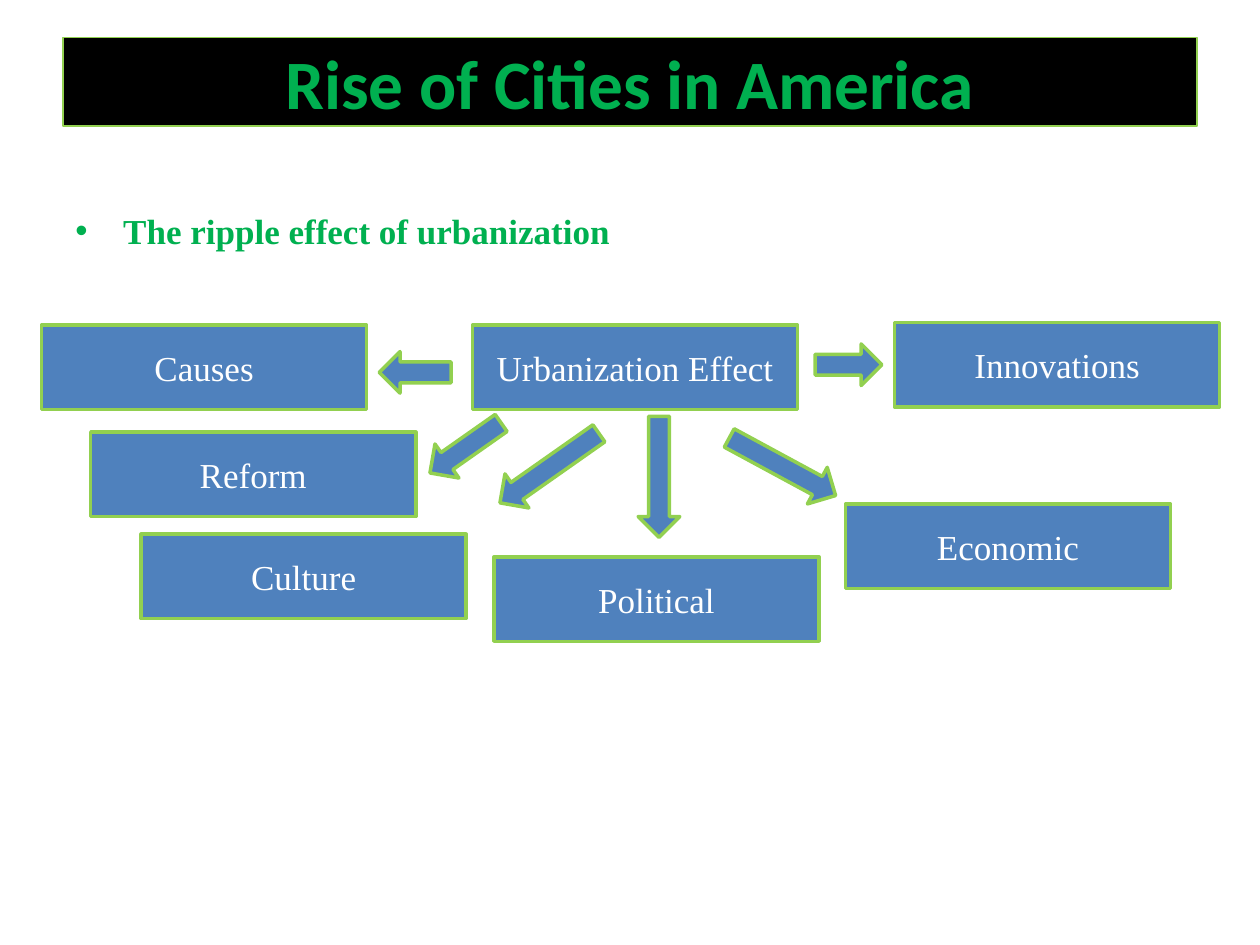
from lxml.etree import SubElement
from pptx import Presentation
from pptx.dml.color import RGBColor
from pptx.enum.shapes import MSO_SHAPE as SHAPE
from pptx.enum.text import MSO_ANCHOR as ANCHOR, PP_ALIGN as ALIGN
from pptx.oxml.ns import qn
from pptx.util import Inches, Pt

BLACK, WHITE = "000000", "FFFFFF"
GREEN, LIME, BLUE = "00B050", "92D050", "4F81BD"
SERIF = "Times New Roman"
BOX_W, BOX_H, ARROW_H = 2.58, 0.67, 0.33

# label, left, top
BOXES = [
    ("Urbanization Effect", 3.75, 2.58),
    ("Causes", 0.33, 2.58),
    ("Innovations", 7.1, 2.56),
    ("Reform", 0.72, 3.43),
    ("Culture", 1.12, 4.24),
    ("Political", 3.92, 4.42),
    ("Economic", 6.71, 4),
]

# left, top, length, rotation
ARROWS = [
    (3.01, 2.79, 0.57, 180),
    (6.47, 2.73, 0.53, 0),
    (3.35, 3.39, 0.69, 144.9),
    (3.88, 3.55, 0.96, 144.9),
    (4.75, 3.62, 0.96, 90),
    (5.73, 3.54, 0.96, 28.4),
]


def rgb(color):
    return RGBColor.from_string(color)


def paint(sp, fill, line=None, width=2):
    sp.fill.solid()
    sp.fill.fore_color.rgb = rgb(fill)
    if line:
        sp.line.color.rgb = rgb(line)
        sp.line.width = Pt(width)


def add_run(p, text, size, font, color, bold=False):
    r = p.add_run()
    r.text = text
    r.font.size = Pt(size)
    r.font.name = font
    r.font.bold = bold
    r.font.color.rgb = rgb(color)


def set_title(slide, text):
    sp = slide.shapes.title
    sp.left, sp.top = Inches(0.5), Inches(0.3)
    sp.width, sp.height = Inches(9), Inches(0.7)
    paint(sp, BLACK, LIME, 0.75)
    tf = sp.text_frame
    tf.vertical_anchor = ANCHOR.MIDDLE
    p = tf.paragraphs[0]
    p.alignment = ALIGN.CENTER
    add_run(p, text, 39.6, "Calibri", GREEN, bold=True)


def add_bullet_text(slide, text):
    sp = slide.shapes.add_textbox(Inches(0.5), Inches(1.61), Inches(9), Inches(4.95))
    paint(sp, WHITE)
    tf = sp.text_frame
    tf.word_wrap = True
    p = tf.paragraphs[0]
    pPr = p._p.get_or_add_pPr()
    pPr.set("marL", str(Inches(0.38)))
    pPr.set("indent", str(-Inches(0.38)))
    SubElement(pPr, qn("a:buFont"), typeface="Arial")
    SubElement(pPr, qn("a:buChar"), char="•")
    add_run(p, text, 20, SERIF, GREEN, bold=True)


def add_preset(slide, kind, left, top, width, height):
    sp = slide.shapes.add_shape(
        kind, Inches(left), Inches(top), Inches(width), Inches(height))
    sp.shadow.inherit = False
    paint(sp, BLUE, LIME)
    return sp


def add_box(slide, label, left, top):
    sp = add_preset(slide, SHAPE.RECTANGLE, left, top, BOX_W, BOX_H)
    tf = sp.text_frame
    tf.word_wrap = True
    tf.vertical_anchor = ANCHOR.MIDDLE
    p = tf.paragraphs[0]
    p.alignment = ALIGN.CENTER
    add_run(p, label, 20, SERIF, WHITE)


def add_arrow(slide, left, top, length, rotation):
    sp = add_preset(slide, SHAPE.RIGHT_ARROW, left, top, length, ARROW_H)
    sp.rotation = rotation


def main():
    prs = Presentation()
    prs.slide_width, prs.slide_height = Inches(10), Inches(7.5)
    slide = prs.slides.add_slide(prs.slide_layouts[5])
    set_title(slide, "Rise of Cities in America")
    add_bullet_text(slide, "The ripple effect of urbanization")
    for box in BOXES:
        add_box(slide, *box)
    for arrow in ARROWS:
        add_arrow(slide, *arrow)
    prs.save("out.pptx")


if __name__ == "__main__":
    main()
